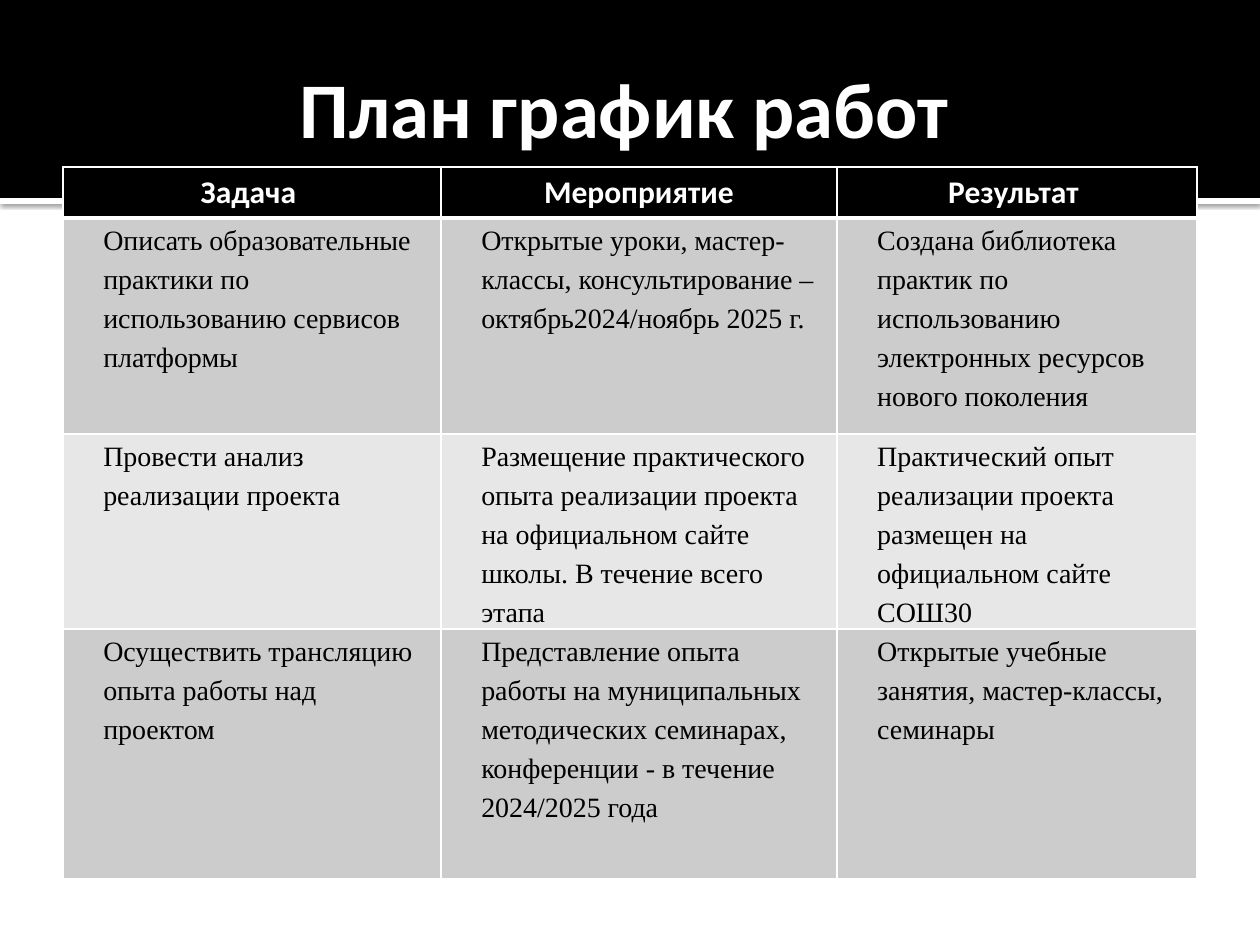
import lxml.etree
import pptx
import pptx.dml.color
import pptx.enum.shapes
import pptx.enum.text
import pptx.oxml
import pptx.oxml.ns
import pptx.util

PX = 914400 / 126
COLORS = {
    "band": "000000",
    "rule": "FFFFFF",
    "heading": "FFFFFF",
    "text": "000000",
    "odd_row": "CCCCCC",
    "even_row": "E7E7E7",
}
HEADINGS = ["Задача ", "Мероприятие", "Результат "]
TASKS = [
    ["Описать образовательные практики по использованию сервисов платформы",
     "Открытые уроки, мастер-классы, консультирование – октябрь2024/ноябрь 2025 г.",
     "Создана библиотека практик по использованию электронных ресурсов нового поколения"],
    ["Провести анализ реализации проекта",
     "Размещение практического опыта реализации проекта на официальном сайте школы. "
     "В течение всего этапа",
     "Практический опыт реализации проекта размещен на официальном сайте СОШ30"],
    ["Осуществить трансляцию опыта работы над проектом",
     "Представление опыта работы на муниципальных методических семинарах, "
     "конференции - в течение 2024/2025 года",
     "Открытые учебные занятия, мастер-классы, семинары"],
]
COLUMN_WIDTHS = [378, 396, 360]
ROW_HEIGHTS = [50, 216, 195, 250]


def px(length):
    return pptx.util.Emu(round(length * PX))


def color(name):
    return pptx.dml.color.RGBColor.from_string(COLORS[name])


def style_paragraph(paragraph, size, font_name, color_name, bold, centered):
    if centered:
        paragraph.alignment = pptx.enum.text.PP_ALIGN.CENTER
    for run in paragraph.runs:
        run.font.size = pptx.util.Pt(size)
        run.font.name = font_name
        run.font.bold = bold
        run.font.color.rgb = color(color_name)


def add_bar(slide, left, top, width, height, color_name):
    bar = slide.shapes.add_shape(
        pptx.enum.shapes.MSO_SHAPE.RECTANGLE, px(left), px(top), px(width), px(height))
    bar.shadow.inherit = False
    bar.fill.solid()
    bar.fill.fore_color.rgb = color(color_name)
    bar.line.fill.background()
    return bar


def add_soft_shadow(shape):
    effects = shape.element.spPr.find(pptx.oxml.ns.qn("a:effectLst"))
    effects.append(pptx.oxml.parse_xml(
        f'<a:outerShdw {pptx.oxml.ns.nsdecls("a")} blurRad="31750" dist="10160" '
        'dir="5400000" rotWithShape="0"><a:srgbClr val="000000">'
        '<a:alpha val="60000"/></a:srgbClr></a:outerShdw>'))


def add_header(slide, left, top, width, height):
    """Black band with a shadowed white rule below it and the title on top."""
    rule = add_bar(slide, left, top + height, width, 6, "rule")
    add_soft_shadow(rule)
    add_bar(slide, left, top, width, height, "band")

    title = slide.shapes.title
    title.element.getparent().append(title.element)
    title.left, title.top = px(left + 63), px(top + 21)
    title.width, title.height = px(width - 126), px(173)
    frame = title.text_frame
    frame.text = "План график работ "
    frame.word_wrap = True
    frame.auto_size = pptx.enum.text.MSO_AUTO_SIZE.NONE
    frame.vertical_anchor = pptx.enum.text.MSO_ANCHOR.MIDDLE
    frame.margin_left = pptx.util.Inches(0.1)
    frame.margin_right = frame.margin_top = frame.margin_bottom = pptx.util.Inches(0.05)
    style_paragraph(frame.paragraphs[0], 45, "Calibri", "heading", True, True)


def set_borders(cell, bottom_width):
    properties = cell._tc.get_or_add_tcPr()
    for side, points in (("L", 1), ("R", 1), ("T", 1), ("B", bottom_width)):
        line = lxml.etree.SubElement(
            properties, pptx.oxml.ns.qn(f"a:ln{side}"), w=str(pptx.util.Pt(points)))
        fill = lxml.etree.SubElement(line, pptx.oxml.ns.qn("a:solidFill"))
        lxml.etree.SubElement(fill, pptx.oxml.ns.qn("a:srgbClr"), val=COLORS["rule"])


def fill_cell(cell, text, fill_name, bottom_width):
    set_borders(cell, bottom_width)
    cell.fill.solid()
    cell.fill.fore_color.rgb = color(fill_name)
    cell.text_frame.text = text
    return cell.text_frame.paragraphs[0]


def add_schedule(slide, left, top):
    schedule = slide.shapes.add_table(
        len(ROW_HEIGHTS), len(COLUMN_WIDTHS), px(left), px(top),
        px(sum(COLUMN_WIDTHS)), px(sum(ROW_HEIGHTS))).table
    for column, width in zip(schedule.columns, COLUMN_WIDTHS):
        column.width = px(width)
    for row, height in zip(schedule.rows, ROW_HEIGHTS):
        row.height = px(height)

    for cell, heading in zip(schedule.rows[0].cells, HEADINGS):
        paragraph = fill_cell(cell, heading, "band", 3)
        style_paragraph(paragraph, 18, "Calibri", "heading", True, True)

    for number, task in enumerate(TASKS, start=1):
        fill_name = "odd_row" if number % 2 else "even_row"
        for cell, text in zip(schedule.rows[number].cells, task):
            paragraph = fill_cell(cell, text, fill_name, 1)
            cell.margin_left = cell.margin_right = pptx.util.Inches(0.07)
            cell.margin_top = cell.margin_bottom = 0
            paragraph.line_spacing = 1.25
            paragraph._p.get_or_add_pPr().set("marL", str(pptx.util.Inches(0.25)))
            style_paragraph(paragraph, 16, "Times New Roman", "text", False, False)


def main():
    presentation = pptx.Presentation()
    presentation.slide_width, presentation.slide_height = px(1260), px(945)
    slide = presentation.slides.add_slide(presentation.slide_layouts.get_by_name("Title Only"))
    add_header(slide, 0, 0, 1260, 198)
    add_schedule(slide, 63, 167)
    presentation.save("out.pptx")


if __name__ == "__main__":
    main()
